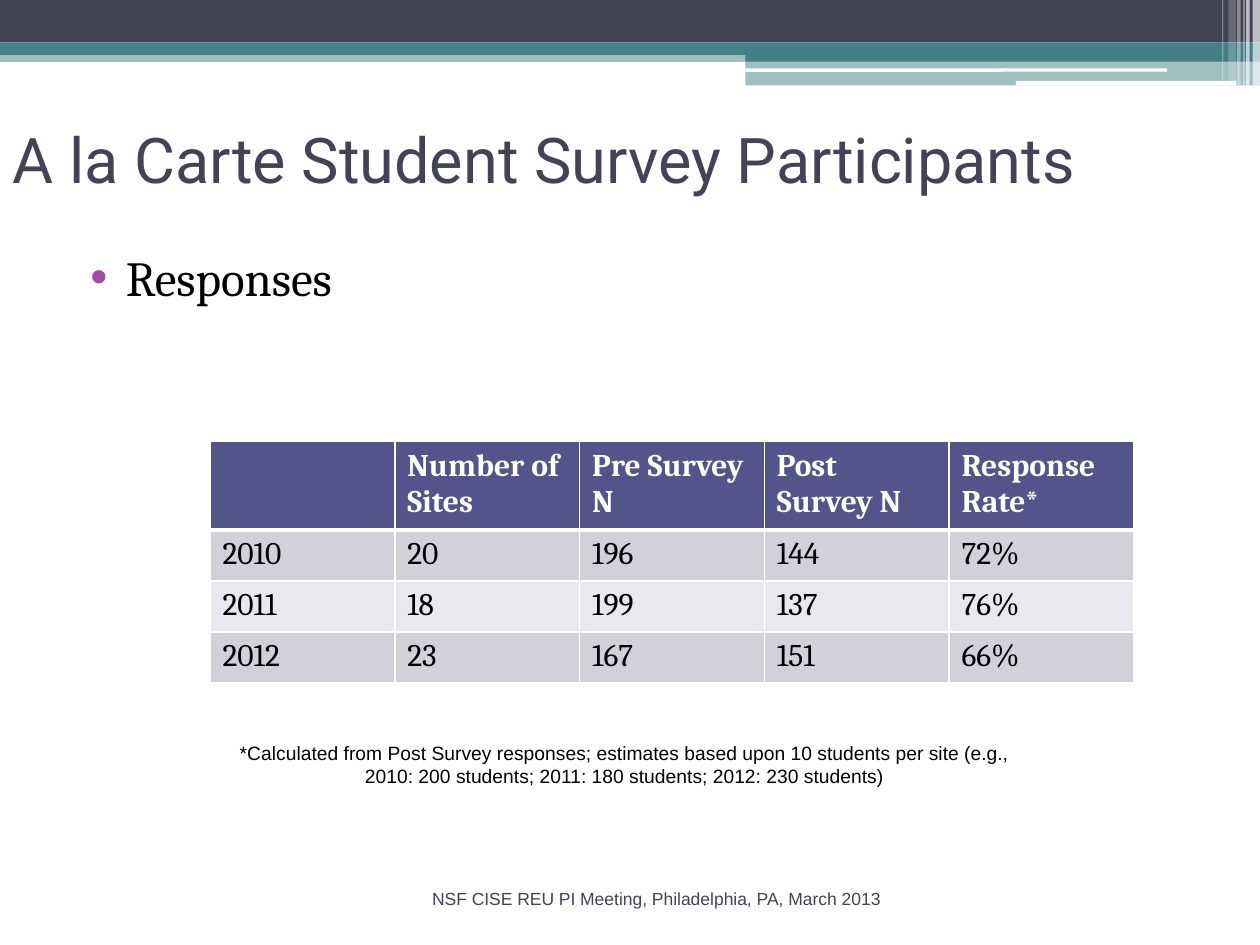
from lxml.etree import SubElement
from pptx import Presentation
from pptx.dml.color import RGBColor
from pptx.enum.shapes import MSO_SHAPE
from pptx.enum.text import MSO_ANCHOR, PP_ALIGN
from pptx.oxml.ns import qn
from pptx.util import Pt

COLORS = {
    "navy": "424456", "teal": "438086", "white": "FFFFFF", "black": "000000",
    "bullet": "A04DA3", "header": "53548A", "band_dark": "D1D1DA", "band_light": "E9E9ED",
}
TABLE_ROWS = [
    ["", "Number of Sites", "Pre Survey N", "Post Survey N", "Response Rate*"],
    ["2010", "20", "196", "144", "72%"],
    ["2011", "18", "199", "137", "76%"],
    ["2012", "23", "167", "151", "66%"],
]


def rgb(name):
    return RGBColor.from_string(COLORS[name])


def add_span(para, text, font, size, color, bold=False):
    span = para.add_run()
    span.text = text
    span.font.name = font
    span.font.size = Pt(size)
    span.font.bold = bold
    span.font.color.rgb = rgb(color)


def add_bar(page, box, color, opacity=100, rounded=False):
    kind = MSO_SHAPE.ROUNDED_RECTANGLE if rounded else MSO_SHAPE.RECTANGLE
    bar = page.shapes.add_shape(kind, *map(Pt, box))
    if rounded:
        bar.adjustments[0] = 0.17
    bar.shadow.inherit = False
    bar.line.fill.background()
    bar.fill.solid()
    bar.fill.fore_color.rgb = rgb(color)
    if opacity < 100:
        fill_color = bar._element.spPr.find(qn("a:solidFill"))[0]
        SubElement(fill_color, qn("a:alpha"), val=str(opacity * 1000))


def add_banner(page, box):
    left, top, width, height = box
    tab_width = 294
    tab_left = left + width - tab_width
    add_bar(page, (left, top + 28.8, width, 6.6), "teal", 50)
    add_bar(page, (left, top, width, 24.2), "navy")
    add_bar(page, (left, top + 24.2, width, 7.2), "teal")
    add_bar(page, (tab_left, top + 28, tab_width, 7.2), "teal")
    add_bar(page, (tab_left, top + 35.2, tab_width, height - 35.2), "teal", 50)
    add_bar(page, (tab_left, top + 39, 241, 2), "white", rounded=True)
    add_bar(page, (left + 580.5, top + 46.2, 126, 2.6), "white", rounded=True)

    # Stripes: distance from the right edge, width, height, opacity
    stripes = [
        (4.2, 4.2, height, 65), (7.9, 2, height, 65), (9.5, 0.7, height, 60),
        (13, 2, height, 40), (18, 4.3, 46.2, 20), (21.6, 0.7, 46.2, 30),
    ]
    for offset, stripe_width, stripe_height, opacity in stripes:
        add_bar(page, (left + width - offset, top, stripe_width, stripe_height), "white", opacity)


def add_text(page, box, text, font, size, color, align=PP_ALIGN.LEFT, anchor=MSO_ANCHOR.TOP):
    frame = page.shapes.add_textbox(*map(Pt, box)).text_frame
    frame.word_wrap = True
    frame.vertical_anchor = anchor
    para = frame.paragraphs[0]
    para.alignment = align
    add_span(para, text, font, size, color)
    return para


def add_bullet(para, indent, hanging):
    para.space_before = Pt(3)
    props = para._p.get_or_add_pPr()
    props.set("marL", str(Pt(indent)))
    props.set("indent", str(-Pt(hanging)))
    bullet_color = SubElement(props, qn("a:buClr"))
    SubElement(bullet_color, qn("a:srgbClr"), val=COLORS["bullet"])
    SubElement(props, qn("a:buFont"), typeface="Arial")
    SubElement(props, qn("a:buChar"), char="•")


def add_borders(cell, bottom_width):
    props = cell._tc.get_or_add_tcPr()
    for side, width in (("L", 1), ("R", 1), ("T", 1), ("B", bottom_width)):
        line = SubElement(props, qn(f"a:ln{side}"), w=str(Pt(width)))
        fill = SubElement(line, qn("a:solidFill"))
        SubElement(fill, qn("a:srgbClr"), val=COLORS["white"])


def add_survey_table(page, box):
    left, top, width, height = box
    row_height = 29.2
    header_height = height - row_height * (len(TABLE_ROWS) - 1)
    table = page.shapes.add_table(len(TABLE_ROWS), len(TABLE_ROWS[0]), *map(Pt, box)).table
    for column in table.columns:
        column.width = Pt(width / len(TABLE_ROWS[0]))

    for r, values in enumerate(TABLE_ROWS):
        is_header = r == 0
        table.rows[r].height = Pt(header_height if is_header else row_height)
        band = "header" if is_header else ("band_dark" if r % 2 else "band_light")
        for c, value in enumerate(values):
            cell = table.cell(r, c)
            add_borders(cell, 3 if is_header else 1)
            if is_header:
                # The heavy rule is shared with the first body row
                cell.vertical_anchor = MSO_ANCHOR.TOP
            elif r == 1:
                cell._tc.tcPr.find(qn("a:lnT")).set("w", str(Pt(3)))
            cell.fill.solid()
            cell.fill.fore_color.rgb = rgb(band)
            if value:
                add_span(cell.text_frame.paragraphs[0], value, "Cambria", 18,
                         "white" if is_header else "black", is_header)


def main():
    deck = Presentation()
    deck.slide_width, deck.slide_height = Pt(720), Pt(540)
    page = deck.slides.add_slide(deck.slide_layouts[6])

    add_banner(page, (0, 0, 720, 48.8))
    add_text(page, (0, 48.5, 648, 84), "A la Carte Student Survey Participants",
             "Roboto", 36, "navy", anchor=MSO_ANCHOR.MIDDLE)
    responses = add_text(page, (36, 138, 648, 340.5), "Responses", "Cambria", 28, "black")
    add_bullet(responses, 28.8, 20.2)
    add_text(page, (210, 504, 330, 36), "NSF CISE REU PI Meeting, Philadelphia, PA, March 2013",
             "Arial", 10, "navy", PP_ALIGN.CENTER)
    add_survey_table(page, (120, 252.4, 528, 136))
    add_text(page, (120, 420, 474, 34),
             "*Calculated from Post Survey responses; estimates based upon 10 students per site "
             "(e.g., 2010: 200 students; 2011: 180 students; 2012: 230 students)",
             "Arial", 11, "black", PP_ALIGN.CENTER)

    deck.save("out.pptx")


if __name__ == "__main__":
    main()
